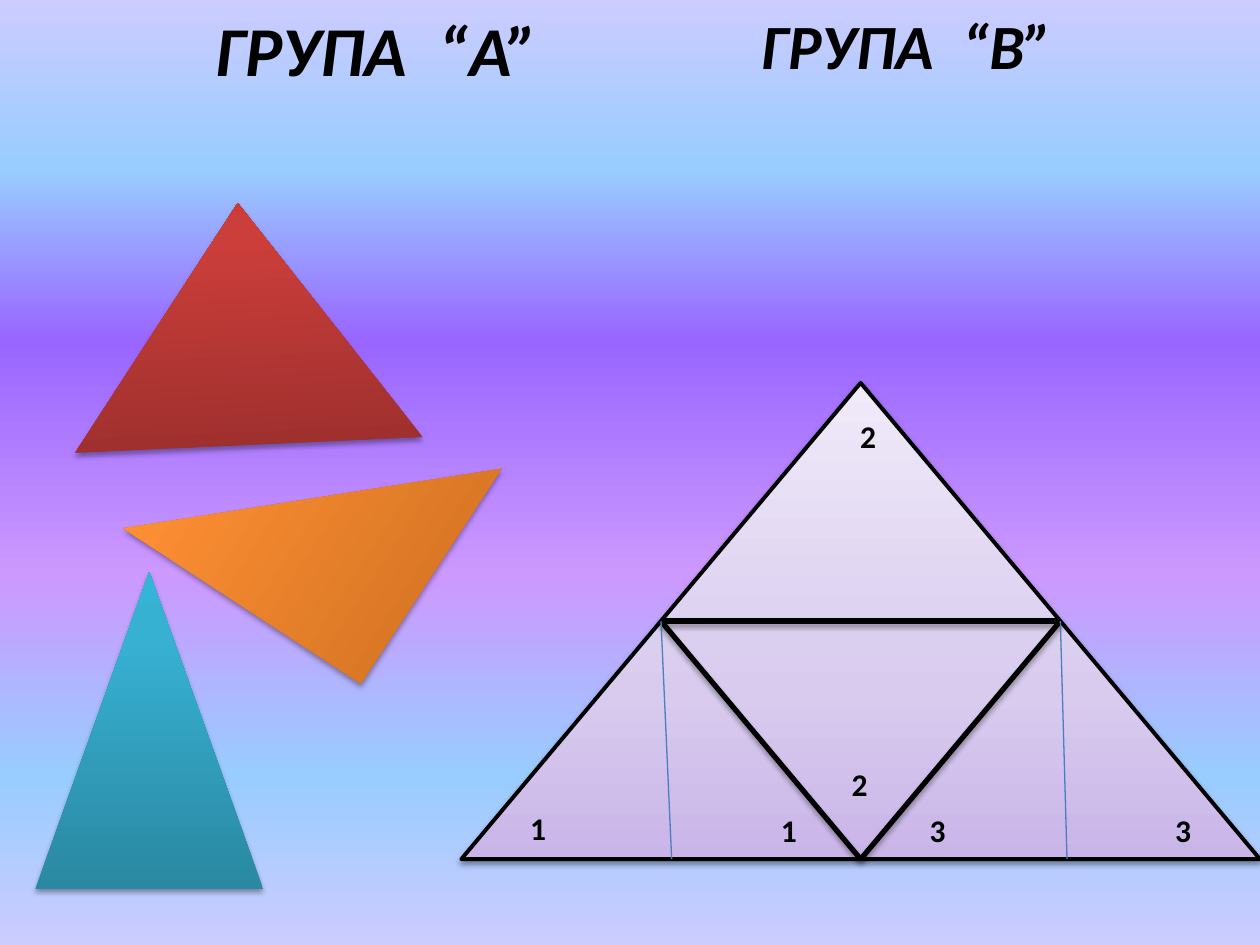
from dataclasses import dataclass

from lxml.etree import SubElement
from pptx import Presentation
from pptx.dml.color import RGBColor
from pptx.enum.shapes import MSO_CONNECTOR, MSO_SHAPE as Preset
from pptx.enum.text import MSO_ANCHOR as Anchor, MSO_AUTO_SIZE as AutoSize, PP_ALIGN as Align
from pptx.oxml.ns import qn
from pptx.util import Cm, Pt

Stops = tuple[tuple[int, str], ...]
Point = tuple[float, float]


@dataclass(frozen=True)
class Theme:
    font: str = "Calibri"
    ink: str = "000000"
    altitude: str = "4B7EBC"
    group_a_size: int = 40
    group_b_size: int = 36
    label_size: int = 18
    outline: float = 2.25
    midline: float = 3
    thin: float = 0.75
    sky: Stops = ((0, "CCCCFF"), (18, "99CCFF"), (36, "9966FF"),
                  (61, "CC99FF"), (82, "99CCFF"), (100, "CCCCFF"))
    teal: Stops = ((0, "2A88A2"), (80, "37B1D2"), (100, "34B4D6"))
    orange: Stops = ((0, "CC6E20"), (80, "FF9034"), (100, "FF9136"))
    red: Stops = ((0, "9C2F2D"), (80, "CB3E3A"), (100, "CE3B37"))
    lilac: Stops = ((0, "C9B5E8"), (35, "D8CBEE"), (100, "F0EAF9"))


@dataclass(frozen=True)
class Box:
    left: float
    top: float
    width: float
    height: float

    def lengths(self) -> tuple[Cm, ...]:
        return tuple(Cm(v) for v in (self.left, self.top, self.width, self.height))


@dataclass(frozen=True)
class Triangle:
    preset: Preset
    box: Box
    stops: Stops
    rotation: float = 0
    outline: float = 0
    shadow_alpha: int = 35
    shadow_distance: float = 1.8


@dataclass(frozen=True)
class Segment:
    start: Point
    end: Point
    color: str
    width: float
    shadow: bool = False


@dataclass(frozen=True)
class AngleLabel:
    text: str
    left: float
    top: float


THEME = Theme()
BIG = Box(9.3, 7.72, 16.1, 9.6)
BASE_Y = BIG.top + BIG.height
MID_Y = BIG.top + BIG.height / 2
LEFT_MID = (BIG.left + BIG.width / 4, MID_Y)
RIGHT_MID = (BIG.left + BIG.width * 3 / 4, MID_Y)
BASE_MID = (BIG.left + BIG.width / 2, BASE_Y)
LABEL_Y = 16.23

PAPER_TRIANGLES = (
    Triangle(Preset.ISOSCELES_TRIANGLE, Box(0.71, 11.53, 4.6, 6.4), THEME.teal),
    Triangle(Preset.RIGHT_TRIANGLE, Box(3.71, 7.19, 5.18, 5.72), THEME.orange, 303.2),
    Triangle(Preset.FLOWCHART_EXTRACT, Box(1.4, 4.09, 7.01, 4.88), THEME.red, 357.4),
)
FOLDED_TRIANGLE = Triangle(Preset.ISOSCELES_TRIANGLE, BIG, THEME.lilac, 0, THEME.outline, 38, 1.6)
MIDLINES = tuple(
    Segment(start, end, THEME.ink, THEME.midline, True)
    for start, end in ((LEFT_MID, RIGHT_MID), (LEFT_MID, BASE_MID), (RIGHT_MID, BASE_MID))
)
ALTITUDES = tuple(
    Segment(top, (foot, BASE_Y), THEME.altitude, THEME.thin)
    for top, foot in ((LEFT_MID, 13.54), (RIGHT_MID, 21.51))
)
ANGLE_LABELS = (
    AngleLabel("1", 10.44, LABEL_Y - 0.04), AngleLabel("1", 15.49, LABEL_Y),
    AngleLabel("2", 17.09, 8.28), AngleLabel("2", 16.92, 15.29),
    AngleLabel("3", 23.44, LABEL_Y), AngleLabel("3", 18.49, LABEL_Y),
)


def apply_gradient(fill, owner, stops: Stops, angle: float) -> None:
    fill.gradient()
    fill.gradient_angle = angle
    stop_list = owner.find(".//" + qn("a:gsLst"))
    for default_stop in list(stop_list):
        stop_list.remove(default_stop)
    for position, color in stops:
        stop = SubElement(stop_list, qn("a:gs"), pos=str(position * 1000))
        SubElement(stop, qn("a:srgbClr"), val=color)


def add_shadow(effects, alpha: int, distance: float) -> None:
    shadow = SubElement(effects, qn("a:outerShdw"), blurRad=str(Pt(3.1)), dist=str(Pt(distance)),
                        dir="5400000", rotWithShape="0")
    color = SubElement(shadow, qn("a:srgbClr"), val=THEME.ink)
    SubElement(color, qn("a:alpha"), val=str(alpha * 1000))


def draw_triangle(shapes, triangle: Triangle) -> None:
    shape = shapes.add_shape(triangle.preset, *triangle.box.lengths())
    shape.rotation = triangle.rotation
    properties = shape._element.spPr
    apply_gradient(shape.fill, properties, triangle.stops, 90)
    if triangle.outline:
        shape.line.color.rgb = RGBColor.from_string(THEME.ink)
        shape.line.width = Pt(triangle.outline)
    else:
        shape.line.fill.background()
    shape.shadow.inherit = False
    add_shadow(properties.find(qn("a:effectLst")), triangle.shadow_alpha, triangle.shadow_distance)


def draw_segment(shapes, segment: Segment) -> None:
    ends = (Cm(v) for v in (*segment.start, *segment.end))
    line = shapes.add_connector(MSO_CONNECTOR.STRAIGHT, *ends)
    line.line.color.rgb = RGBColor.from_string(segment.color)
    line.line.width = Pt(segment.width)
    effects = SubElement(line._element.spPr, qn("a:effectLst"))
    if segment.shadow:
        add_shadow(effects, 35, 1.8)


def write_text(holder, text: str, size: int, italic: bool = False) -> None:
    frame = holder.text_frame
    frame.word_wrap = False
    frame.auto_size = AutoSize.SHAPE_TO_FIT_TEXT
    frame.vertical_anchor = Anchor.TOP
    paragraph = frame.paragraphs[0]
    paragraph.alignment = Align.LEFT
    run = paragraph.add_run()
    run.text = text
    run.font.name = THEME.font
    run.font.size = Pt(size)
    run.font.bold = True
    run.font.italic = italic
    run.font.color.rgb = RGBColor.from_string(THEME.ink)


def draw_label(shapes, label: AngleLabel) -> None:
    box = Box(label.left, label.top, 0.74, 0.94)
    write_text(shapes.add_textbox(*box.lengths()), label.text, THEME.label_size)


def main() -> None:
    deck = Presentation()
    deck.slide_width, deck.slide_height = Cm(25.4), Cm(19.05)
    slide = deck.slides.add_slide(deck.slide_layouts[5])
    apply_gradient(slide.background.fill, slide._element, THEME.sky, 270)

    group_a = slide.shapes.title
    group_a.left, group_a.top, group_a.width, group_a.height = Box(4.09, 0, 7.09, 1.96).lengths()
    write_text(group_a, "ГРУПА  “А”", THEME.group_a_size, True)

    paper = slide.shapes.add_group_shape().shapes
    for triangle in PAPER_TRIANGLES:
        draw_triangle(paper, triangle)

    folding = slide.shapes.add_group_shape().shapes
    draw_triangle(folding, FOLDED_TRIANGLE)
    for midline in MIDLINES:
        draw_segment(folding, midline)
    for label in ANGLE_LABELS:
        draw_label(folding, label)
    for altitude in ALTITUDES:
        draw_segment(folding, altitude)

    group_b = slide.shapes.add_textbox(*Box(15.09, 0, 6.43, 1.8).lengths())
    write_text(group_b, "ГРУПА  “В”", THEME.group_b_size, True)
    deck.save("out.pptx")


if __name__ == "__main__":
    main()
